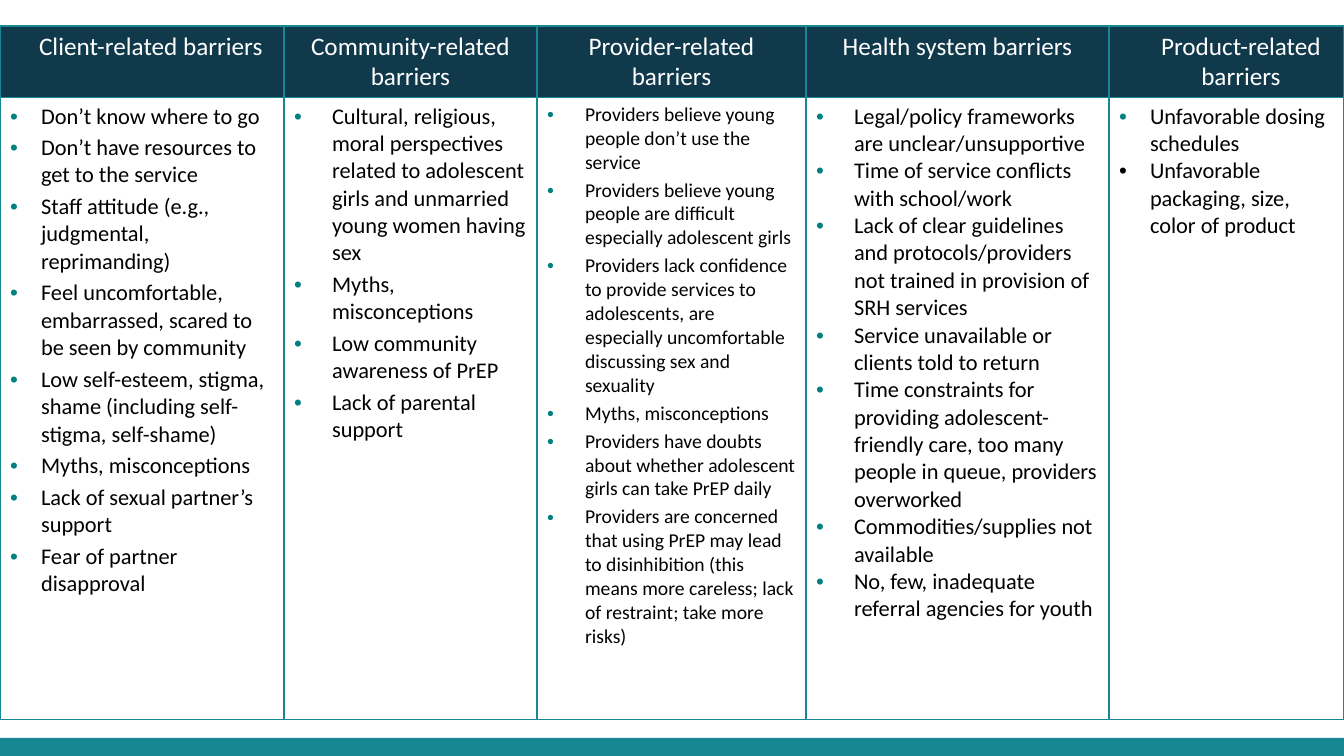
from dataclasses import dataclass

from lxml.etree import SubElement
from pptx import Presentation
from pptx.dml.color import RGBColor
from pptx.enum.shapes import MSO_SHAPE
from pptx.enum.text import PP_ALIGN as Align
from pptx.oxml.ns import qn
from pptx.util import Emu, Pt

SLIDE_WIDTH, SLIDE_HEIGHT = 1344, 756
EMU_PER_PX = 12192000 / SLIDE_WIDTH


@dataclass(frozen=True)
class Theme:
    font: str = "Calibri"
    teal: str = "178793"
    navy: str = "10394B"
    bullet: str = "008080"
    text: str = "000000"
    header_text: str = "FFFFFF"
    header_size: int = 18
    body_size: int = 16
    small_size: int = 14
    border_width: int = 1


THEME = Theme()


@dataclass(frozen=True)
class BarrierColumn:
    title: str
    width: int
    items: tuple[str, ...]
    size: int = THEME.body_size
    indent: int = 38
    space_after: int = 3
    title_indent: int = 0
    title_align: Align = Align.CENTER
    plain_bullets: tuple[int, ...] = ()


COLUMNS = (
    BarrierColumn("Client-related barriers", 284, (
        "Don’t know where to go",
        "Don’t have resources to get to the service",
        "Staff attitude (e.g., judgmental, reprimanding)",
        "Feel uncomfortable, embarrassed, scared to be seen by community",
        "Low self-esteem, stigma, shame (including self-stigma, self-shame)",
        "Myths, misconceptions",
        "Lack of sexual partner’s support",
        "Fear of partner disapproval",
    ), indent=31, title_indent=29, title_align=Align.LEFT),
    BarrierColumn("Community-related barriers", 253, (
        "Cultural, religious, moral perspectives related to adolescent girls "
        "and unmarried young women having sex",
        "Myths, misconceptions",
        "Low community awareness of PrEP",
        "Lack of parental support",
    )),
    BarrierColumn("Provider-related barriers", 269, (
        "Providers believe young people don’t use the service",
        "Providers believe young people are difficult especially adolescent girls",
        "Providers lack confidence to provide services to adolescents, are "
        "especially uncomfortable discussing sex and sexuality",
        "Myths, misconceptions",
        "Providers have doubts about whether adolescent girls can take PrEP daily",
        "Providers are concerned that using PrEP may lead to disinhibition "
        "(this means more careless; lack of restraint; take more risks)",
    ), size=THEME.small_size),
    BarrierColumn("Health system barriers", 303, (
        "Legal/policy frameworks are unclear/unsupportive",
        "Time of service conflicts with school/work",
        "Lack of clear guidelines and protocols/providers not trained in "
        "provision of SRH services",
        "Service unavailable or clients told to return",
        "Time constraints for providing adolescent-friendly care, too many "
        "people in queue, providers overworked",
        "Commodities/supplies not available",
        "No, few, inadequate referral agencies for youth",
    ), space_after=0),
    BarrierColumn("Product-related barriers", 235, (
        "Unfavorable dosing schedules",
        "Unfavorable packaging, size, color of product",
    ), indent=31, space_after=0, title_indent=29, plain_bullets=(1,)),
)
TABLE_TOP = 26
ROW_HEIGHTS = (71, 622)
BAR_TOP = 738


def px(length: int) -> Emu:
    return Emu(round(length * EMU_PER_PX))


def rgb(color: str) -> RGBColor:
    return RGBColor.from_string(color)


def add_span(para, text: str, size: int, color: str) -> None:
    span = para.add_run()
    span.text = text
    span.font.name = THEME.font
    span.font.size = Pt(size)
    span.font.bold = False
    span.font.color.rgb = rgb(color)


def indent_para(para, left: int, first: int = 0) -> None:
    properties = para._p.get_or_add_pPr()
    properties.set("marL", str(px(left)))
    properties.set("indent", str(px(first)))


def add_bullet(para, color: str) -> None:
    properties = para._p.get_or_add_pPr()
    bullet_color = SubElement(properties, qn("a:buClr"))
    SubElement(bullet_color, qn("a:srgbClr"), val=color)
    SubElement(properties, qn("a:buFont"), typeface="Arial")
    SubElement(properties, qn("a:buChar"), char="•")


def add_borders(cell) -> None:
    """Draw all four sides; the lines must precede the fill in the cell."""
    properties = cell._tc.get_or_add_tcPr()
    for position, side in enumerate(("lnL", "lnR", "lnT", "lnB")):
        line = SubElement(properties, qn(f"a:{side}"), w=str(Pt(THEME.border_width)))
        fill = SubElement(line, qn("a:solidFill"))
        SubElement(fill, qn("a:srgbClr"), val=THEME.teal)
        properties.insert(position, line)


def fill_header(cell, column: BarrierColumn) -> None:
    cell.fill.solid()
    cell.fill.fore_color.rgb = rgb(THEME.navy)
    add_borders(cell)
    para = cell.text_frame.paragraphs[0]
    para.alignment = column.title_align
    indent_para(para, column.title_indent)
    add_span(para, column.title, THEME.header_size, THEME.header_text)


def fill_body(cell, column: BarrierColumn) -> None:
    cell.fill.background()
    add_borders(cell)
    frame = cell.text_frame
    for index, item in enumerate(column.items):
        para = frame.add_paragraph() if index else frame.paragraphs[0]
        para.space_after = Pt(column.space_after)
        indent_para(para, column.indent, -column.indent)
        add_bullet(para, THEME.text if index in column.plain_bullets else THEME.bullet)
        add_span(para, item, column.size, THEME.text)


def add_bottom_bar(page) -> None:
    bar = page.shapes.add_shape(
        MSO_SHAPE.RECTANGLE, 0, px(BAR_TOP), px(SLIDE_WIDTH), px(SLIDE_HEIGHT - BAR_TOP))
    bar.shadow.inherit = False
    bar.fill.solid()
    bar.fill.fore_color.rgb = rgb(THEME.teal)
    bar.line.fill.background()


def add_barrier_table(page) -> None:
    table = page.shapes.add_table(
        len(ROW_HEIGHTS), len(COLUMNS), 0, px(TABLE_TOP),
        px(SLIDE_WIDTH), px(sum(ROW_HEIGHTS))).table
    table.first_row = False
    table.horz_banding = False
    for row, height in zip(table.rows, ROW_HEIGHTS):
        row.height = px(height)
    for index, column in enumerate(COLUMNS):
        table.columns[index].width = px(column.width)
        fill_header(table.cell(0, index), column)
        fill_body(table.cell(1, index), column)


def main() -> None:
    deck = Presentation()
    deck.slide_width, deck.slide_height = px(SLIDE_WIDTH), px(SLIDE_HEIGHT)
    page = deck.slides.add_slide(deck.slide_layouts[6])
    add_bottom_bar(page)
    add_barrier_table(page)
    deck.save("out.pptx")


if __name__ == "__main__":
    main()
